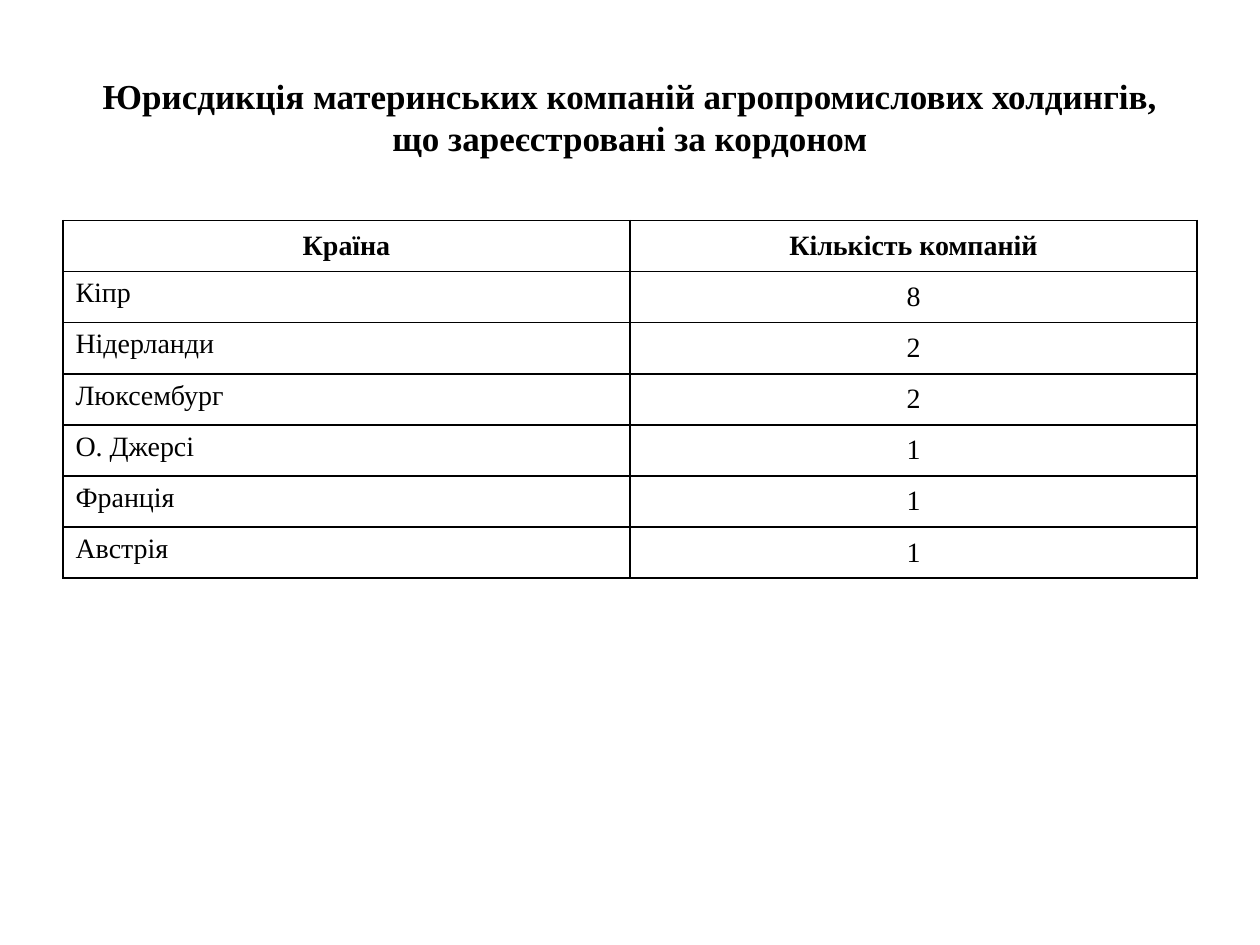
from lxml.etree import SubElement
from pptx import Presentation
from pptx.dml.color import RGBColor
from pptx.enum.text import MSO_ANCHOR as Anchor, PP_ALIGN as Align
from pptx.oxml.ns import qn
from pptx.util import Inches, Pt

TITLE = "Юрисдикція материнських компаній агропромислових холдингів, що зареєстровані за кордоном"
ROWS = [
    ("Країна", "Кількість компаній"),
    ("Кіпр", "8"),
    ("Нідерланди", "2"),
    ("Люксембург", "2"),
    ("О. Джерсі", "1"),
    ("Франція", "1"),
    ("Австрія", "1"),
]


def color(value):
    return RGBColor.from_string(value)


class SlideBuilder:
    font = "Times New Roman"
    ink = "000000"
    title_size = 20
    table_size = 16

    def __init__(self, page):
        self.page = page

    def set_text(self, para, text, size, bold, align):
        para.text = text
        para.alignment = align
        para.font.name = self.font
        para.font.size = Pt(size)
        para.font.bold = bold
        para.font.color.rgb = color(self.ink)

    def title(self, text, left, top, width, height):
        box = self.page.shapes.add_textbox(
            Inches(left), Inches(top), Inches(width), Inches(height))
        frame = box.text_frame
        frame.word_wrap = True
        frame.vertical_anchor = Anchor.MIDDLE
        self.set_text(frame.paragraphs[0], text, self.title_size, True, Align.CENTER)

    def borders(self, cell):
        properties = cell._tc.get_or_add_tcPr()
        for side in ("lnL", "lnR", "lnT", "lnB"):
            line = SubElement(properties, qn(f"a:{side}"), w=str(Pt(1)))
            fill = SubElement(line, qn("a:solidFill"))
            SubElement(fill, qn("a:srgbClr"), val=self.ink)

    def table(self, rows, left, top, width, height):
        table = self.page.shapes.add_table(
            len(rows), len(rows[0]), Inches(left), Inches(top),
            Inches(width), Inches(height)).table
        for r, values in enumerate(rows):
            for c, text in enumerate(values):
                cell = table.cell(r, c)
                header = r == 0
                centered = header or c > 0
                self.borders(cell)
                cell.fill.background()
                cell.vertical_anchor = Anchor.MIDDLE if centered else Anchor.TOP
                self.set_text(cell.text_frame.paragraphs[0], text, self.table_size,
                              header, Align.CENTER if centered else Align.LEFT)


def main():
    deck = Presentation()
    deck.slide_width = Inches(10)
    deck.slide_height = Inches(7.5)
    builder = SlideBuilder(deck.slides.add_slide(deck.slide_layouts[6]))
    builder.title(TITLE, 0.5, 0.3, 9, 1.25)
    builder.table(ROWS, 0.5, 1.75, 9, 2.84)
    deck.save("out.pptx")


if __name__ == "__main__":
    main()
